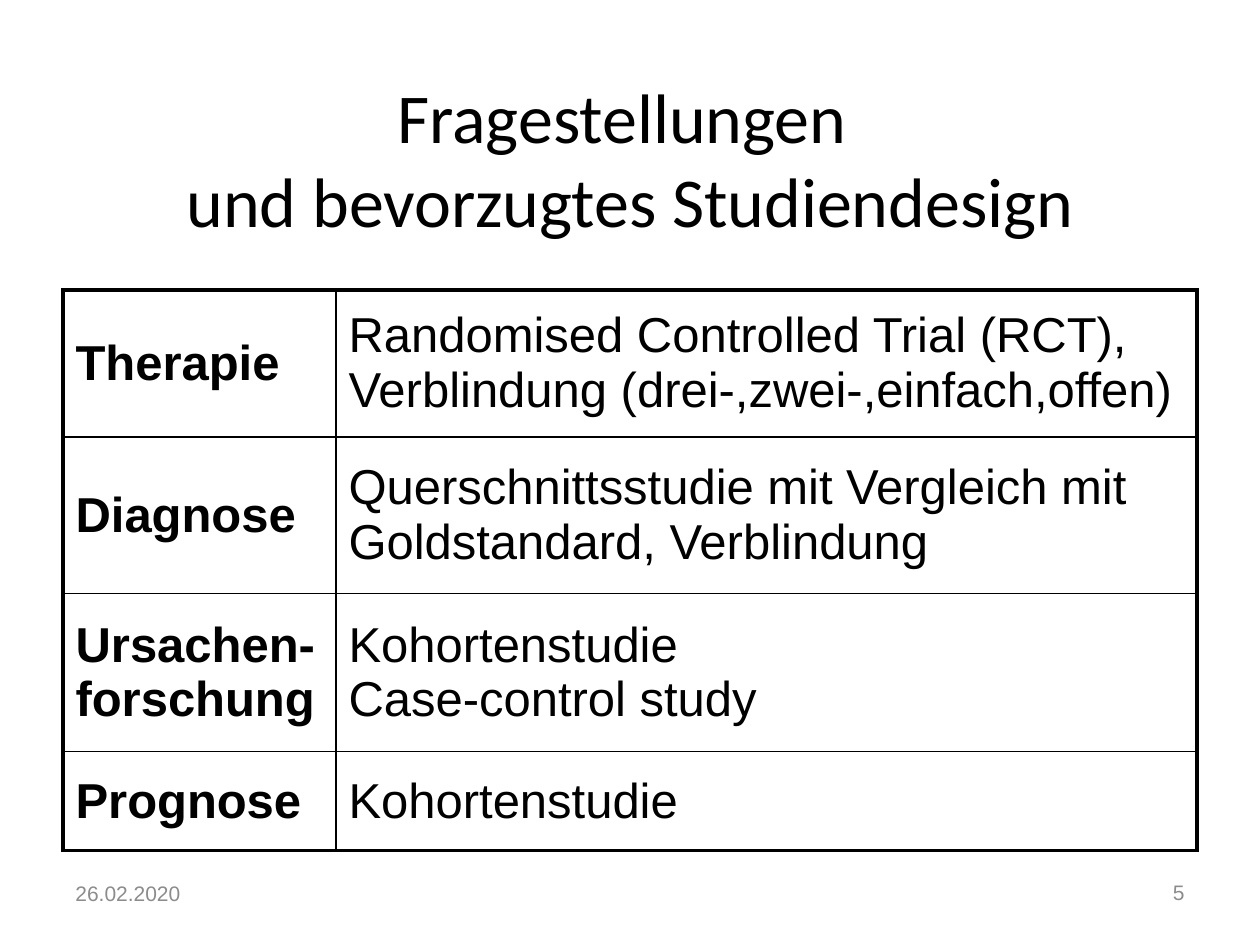
from lxml import etree
from pptx import Presentation
from pptx.dml.color import RGBColor
from pptx.enum.text import MSO_ANCHOR, PP_ALIGN
from pptx.oxml.ns import qn
from pptx.util import Pt

LEFT, CENTER, RIGHT = PP_ALIGN.LEFT, PP_ALIGN.CENTER, PP_ALIGN.RIGHT
MIDDLE = MSO_ANCHOR.MIDDLE
BLACK = RGBColor(0x00, 0x00, 0x00)
GRAY = RGBColor(0x8C, 0x8C, 0x8C)
THICK, THIN = Pt(2.25), Pt(1)

# Content: text, box (left, top, width, height), alignment, font, size, colour
TEXTS = [
    ("Fragestellungen \vund bevorzugtes Studiendesign",
     (62, 36, 596, 108), CENTER, "Calibri", 40, BLACK),
    ("26.02.2020", (36, 492, 168, 37), LEFT, "Arial", 12, GRAY),
    ("5", (516, 492, 168, 36), RIGHT, "Arial", 12, GRAY),
]
STUDY_DESIGNS = [
    ("Therapie", "Randomised Controlled Trial (RCT), "
                 "Verblindung (drei-,zwei-,einfach,offen)"),
    ("Diagnose", "Querschnittsstudie mit Vergleich mit Goldstandard, Verblindung"),
    ("Ursachen-forschung", "Kohortenstudie\nCase-control study"),
    ("Prognose", "Kohortenstudie"),
]
TABLE_LEFT, TABLE_TOP = 36, 165.6
COLUMN_WIDTHS = [156, 492]
ROW_HEIGHTS = [84, 89.5, 90.5, 56.4]


def format_text(text_frame, alignment, font_name, size, color, bold=False):
    for paragraph in text_frame.paragraphs:
        paragraph.alignment = alignment
        for run in paragraph.runs:
            run.font.name = font_name
            run.font.size = Pt(size)
            run.font.bold = bold
            run.font.color.rgb = color


def add_border(cell, side, width):
    properties = cell._tc.get_or_add_tcPr()
    line = etree.SubElement(properties, qn(f"a:ln{side}"), w=str(width))
    fill = etree.SubElement(line, qn("a:solidFill"))
    etree.SubElement(fill, qn("a:srgbClr"), val=str(BLACK))


presentation = Presentation()
presentation.slide_width, presentation.slide_height = Pt(720), Pt(540)
slide = presentation.slides.add_slide(presentation.slide_layouts[6])

# Title, date and slide number
for text, box, alignment, font_name, size, color in TEXTS:
    text_frame = slide.shapes.add_textbox(*map(Pt, box)).text_frame
    text_frame.word_wrap = True
    text_frame.vertical_anchor = MIDDLE
    text_frame.text = text
    format_text(text_frame, alignment, font_name, size, color)

# Table with a thick frame and thin inner lines
last_row, last_column = len(ROW_HEIGHTS) - 1, len(COLUMN_WIDTHS) - 1
table = slide.shapes.add_table(
    len(ROW_HEIGHTS), len(COLUMN_WIDTHS), Pt(TABLE_LEFT), Pt(TABLE_TOP),
    Pt(sum(COLUMN_WIDTHS)), Pt(sum(ROW_HEIGHTS))).table
table.first_row = table.horz_banding = False
for column, width in zip(table.columns, COLUMN_WIDTHS):
    column.width = Pt(width)
for row, height in zip(table.rows, ROW_HEIGHTS):
    row.height = Pt(height)

for row_index, row_texts in enumerate(STUDY_DESIGNS):
    for column_index, text in enumerate(row_texts):
        cell = table.cell(row_index, column_index)
        cell.text_frame.text = text
        cell.vertical_anchor = MIDDLE
        format_text(cell.text_frame, LEFT, "Arial", 28, BLACK, column_index == 0)
        outer_sides = {"L": column_index == 0, "R": column_index == last_column,
                       "T": row_index == 0, "B": row_index == last_row}
        for side, is_outer in outer_sides.items():
            add_border(cell, side, THICK if is_outer else THIN)
        cell.fill.background()

presentation.save("out.pptx")
